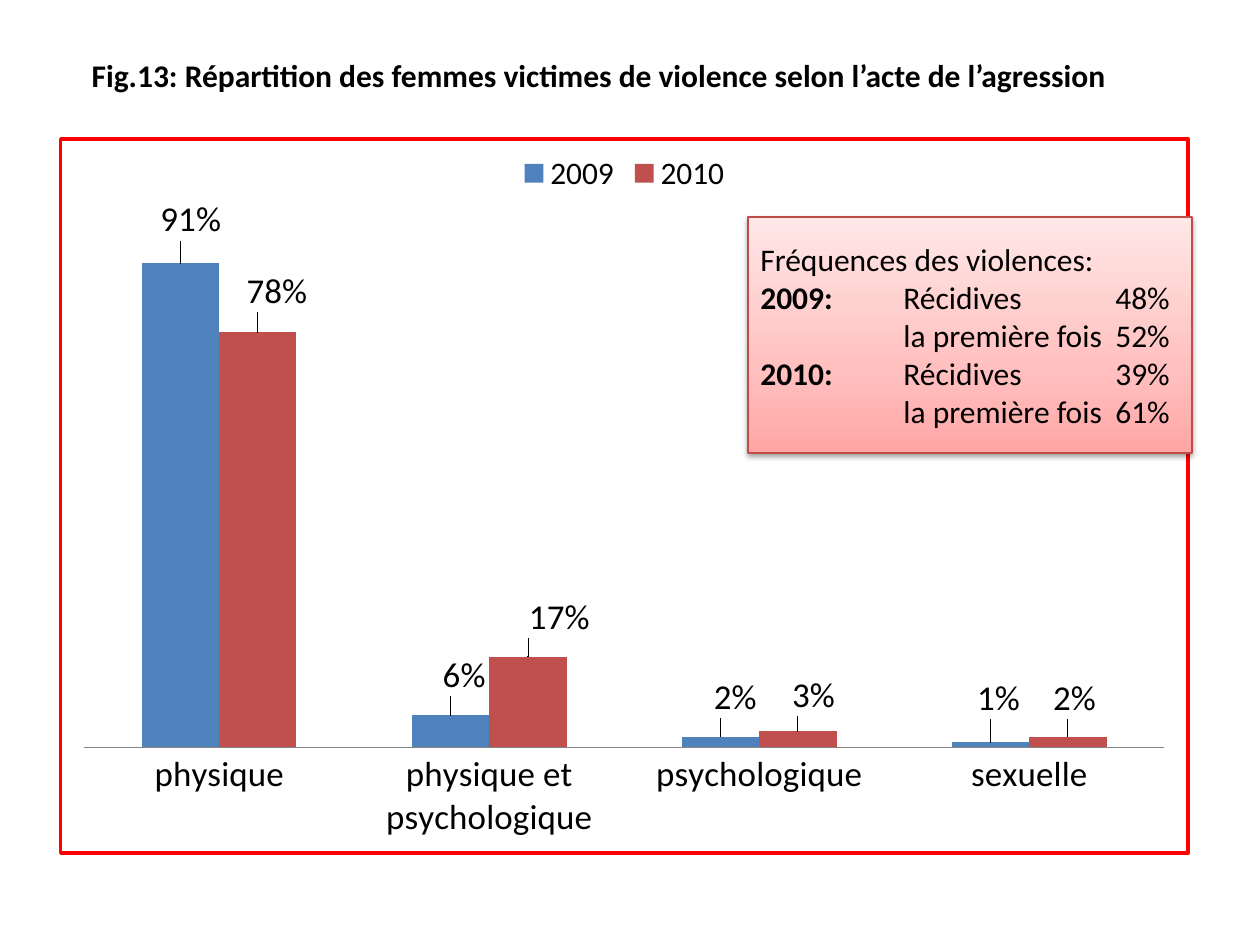
from lxml import etree
from pptx import Presentation
from pptx import util as u
from pptx.chart import data as chart_data
from pptx.dml.color import RGBColor
from pptx.enum import chart as charts, shapes, text
from pptx.oxml import ns, parse_xml

PX = 914400 / 126  # EMU in one px
FONT = "Calibri"
BLACK = RGBColor(0x00, 0x00, 0x00)
RED = RGBColor(0xFF, 0x00, 0x00)
BLUE = RGBColor(0x4F, 0x81, 0xBD)
BRICK = RGBColor(0xC0, 0x50, 0x4D)
GREY = RGBColor(0x86, 0x86, 0x86)
BOX_LINE = RGBColor(0xBF, 0x4C, 0x48)
BOX_STOPS = [(0, RGBColor(0xFF, 0xA6, 0xA5)),
             (35, RGBColor(0xFF, 0xC0, 0xBF)),
             (100, RGBColor(0xFF, 0xE7, 0xE7))]

CATEGORIES = ["physique", "physique et psychologique", "psychologique", "sexuelle"]
# name, colour, values, label shifts in px
SERIES = [
    ("2009", BLUE, [0.91, 0.06, 0.02, 0.01], [(10, -17), (14, -14), (15, -14), (8, -18)]),
    ("2010", BRICK, [0.78, 0.17, 0.03, 0.02], [(19, -15), (32, -14), (16, -10), (7, -12)]),
]
FREQUENCIES = [
    ("", "Fréquences des violences:"),
    ("2009:", "\tRécidives\t48%"),
    ("", "\tla première fois\t52%"),
    ("2010:", "\tRécidives\t39%"),
    ("", "\tla première fois\t61%"),
]


def px(length):
    return u.Emu(round(length * PX))


def set_font(font, size, bold=None):
    font.name, font.size, font.bold = FONT, u.Pt(size), bold
    font.color.rgb = BLACK


def layout_xml(target="", **places):
    """Manual chart layout, in fractions of the chart."""
    inner = f'<c:layoutTarget val="{target}"/>' if target else ""
    if target:
        inner += '<c:xMode val="edge"/><c:yMode val="edge"/>'
    inner += "".join(f'<c:{name} val="{value:.3f}"/>' for name, value in places.items())
    return parse_xml(f'<c:layout {ns.nsdecls("c")}><c:manualLayout>{inner}'
                     "</c:manualLayout></c:layout>")


def add_title(page, left, top, width, height):
    title = page.shapes.title
    title.left, title.top, title.width, title.height = map(px, (left, top, width, height))
    frame = title.text_frame
    frame.text = "Fig.13: Répartition des femmes victimes de violence selon l’acte de l’agression"
    frame.word_wrap = False
    frame.auto_size = text.MSO_AUTO_SIZE.SHAPE_TO_FIT_TEXT
    frame.vertical_anchor = text.MSO_ANCHOR.MIDDLE
    para = frame.paragraphs[0]
    para.alignment = text.PP_ALIGN.LEFT
    set_font(para.font, 18, True)


def add_violence_chart(page, left, top, width, height):
    data = chart_data.CategoryChartData(number_format="0%")
    data.categories = CATEGORIES
    for name, _, values, _ in SERIES:
        data.add_series(name, values)
    chart = page.shapes.add_chart(charts.XL_CHART_TYPE.COLUMN_CLUSTERED,
                                  *map(px, (left, top, width, height)), data).chart
    set_font(chart.font, 10)
    chart.has_title = False

    # Legend and axes
    chart.has_legend = True
    chart.legend.position = charts.XL_LEGEND_POSITION.TOP
    chart.legend.include_in_layout = False
    set_font(chart.legend.font, 18)
    values_axis, names_axis = chart.value_axis, chart.category_axis
    values_axis.visible = False
    values_axis.has_major_gridlines = False
    values_axis.minimum_scale, values_axis.maximum_scale = 0, 1
    values_axis.tick_labels.number_format = "0%"
    values_axis.tick_labels.number_format_is_linked = False
    names_axis.major_tick_mark = charts.XL_TICK_MARK.NONE
    names_axis.format.line.color.rgb = GREY
    set_font(names_axis.tick_labels.font, 20)

    # Columns and their shifted labels
    plot = chart.plots[0]
    plot.gap_width, plot.overlap = 150, 0
    plot.vary_by_categories = False
    for series, (_, colour, _, shifts) in zip(plot.series, SERIES):
        series.format.fill.solid()
        series.format.fill.fore_color.rgb = colour
        series.invert_if_negative = False
        labels = series.data_labels
        labels.show_value = True
        labels.number_format, labels.number_format_is_linked = "0%", False
        labels.position = charts.XL_LABEL_POSITION.OUTSIDE_END
        set_font(labels.font, 20)
        for index in range(len(shifts)):
            label = series.points[index].data_label
            set_font(label.font, 20)
            label.position = charts.XL_LABEL_POSITION.OUTSIDE_END
        nodes = series.data_labels._element.findall(ns.qn("c:dLbl"))
        for node, (right, down) in zip(nodes, shifts):
            node.insert(1, layout_xml(x=right / width, y=down / height))

    # Plot area place and chart border
    root = chart._chartSpace
    area = root.find(".//" + ns.qn("c:plotArea"))
    for old in area.findall(ns.qn("c:layout")):
        area.remove(old)
    area.insert(0, layout_xml("inner", x=24 / width, y=77 / height,
                              w=1084 / width, h=535 / height))
    root.find(ns.qn("c:chart")).addnext(parse_xml(
        f'<c:spPr {ns.nsdecls("c", "a")}><a:noFill/><a:ln w="{u.Pt(2)}"><a:solidFill>'
        f'<a:srgbClr val="{RED}"/></a:solidFill></a:ln></c:spPr>'))


def add_frequency_box(page, left, top, width, height):
    box = page.shapes.add_shape(shapes.MSO_SHAPE.RECTANGLE,
                                *map(px, (left, top, width, height)))
    box.line.color.rgb = BOX_LINE
    box.line.width = u.Pt(0.75)

    # Gradient fill and soft shadow
    stops = "".join(f'<a:gs pos="{place * 1000}"><a:srgbClr val="{colour}"/></a:gs>'
                    for place, colour in BOX_STOPS)
    properties = box._element.spPr
    properties.find(ns.qn("a:prstGeom")).addnext(parse_xml(
        f'<a:gradFill {ns.nsdecls("a")} rotWithShape="1"><a:gsLst>{stops}</a:gsLst>'
        '<a:lin ang="16200000" scaled="0"/></a:gradFill>'))
    properties.append(parse_xml(
        f'<a:effectLst {ns.nsdecls("a")}><a:outerShdw blurRad="{u.Pt(3.1)}" '
        f'dist="{u.Pt(1.6)}" dir="5400000" rotWithShape="0"><a:srgbClr val="000000">'
        '<a:alpha val="38000"/></a:srgbClr></a:outerShdw></a:effectLst>'))

    # Lines in three tabbed columns
    frame = box.text_frame
    frame.word_wrap = True
    frame.vertical_anchor = text.MSO_ANCHOR.MIDDLE
    for index, (year, entry) in enumerate(FREQUENCIES):
        para = frame.add_paragraph() if index else frame.paragraphs[0]
        para.alignment = text.PP_ALIGN.LEFT
        set_font(para.font, 18)
        if year:
            span = para.add_run()
            span.text, span.font.bold = year, True
        para.add_run().text = entry
        tabs = etree.Element(ns.qn("a:tabLst"))
        for place in (143, 355):
            etree.SubElement(tabs, ns.qn("a:tab"), pos=str(px(place)), algn="l")
        para._p.pPr.find(ns.qn("a:defRPr")).addprevious(tabs)


def main():
    deck = Presentation()
    deck.slide_width, deck.slide_height = px(1260), px(945)
    page = deck.slides.add_slide(deck.slide_layouts[5])
    add_title(page, 79, 49, 1048, 51)
    add_violence_chart(page, 59, 137, 1131, 718)
    add_frequency_box(page, 748, 217, 444, 236)
    deck.save("out.pptx")


if __name__ == "__main__":
    main()
